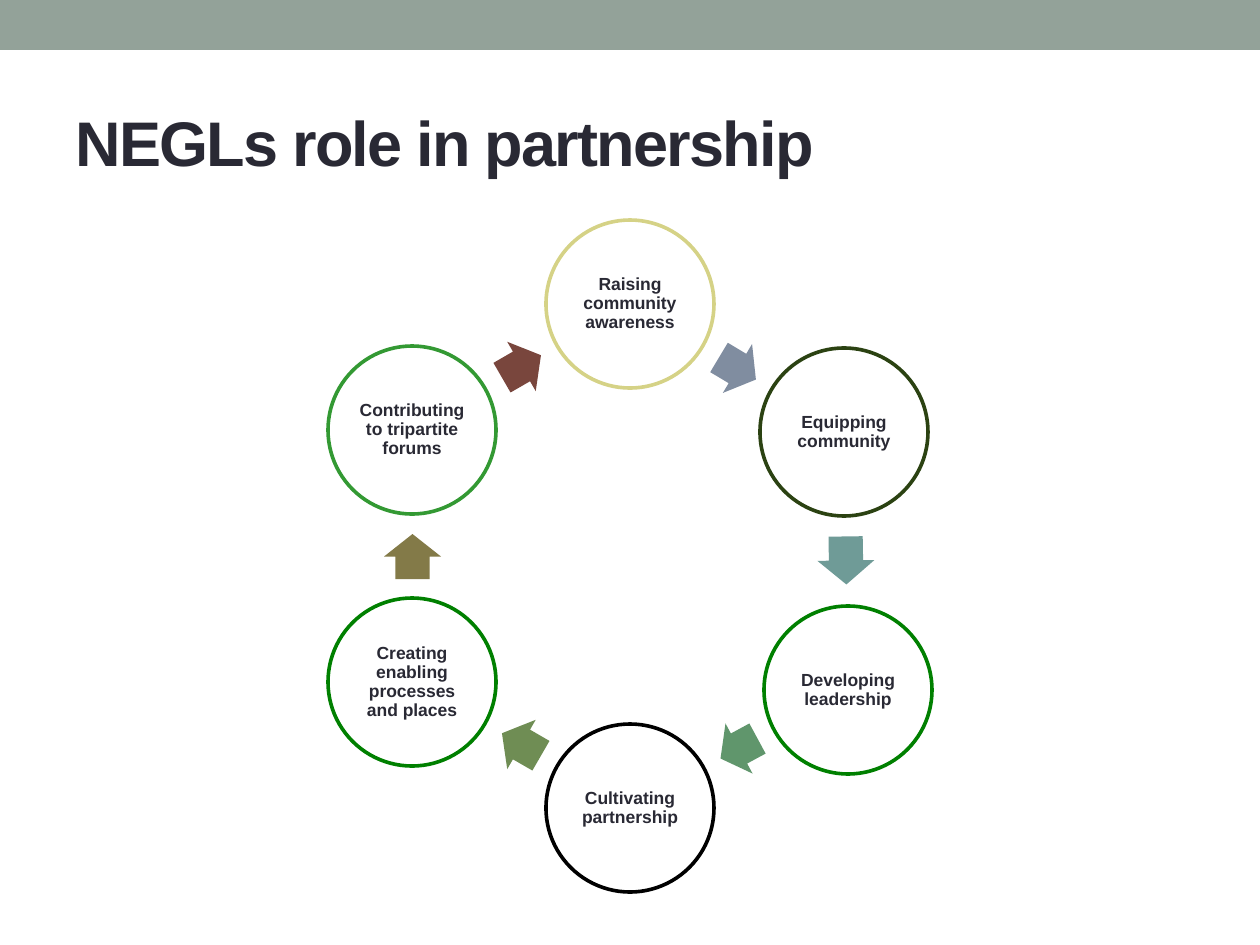
from dataclasses import dataclass
from math import atan2, cos, degrees, hypot, radians, sin

from pptx import Presentation
from pptx.dml.color import RGBColor
from pptx.enum.shapes import MSO_SHAPE
from pptx.enum.text import MSO_ANCHOR, PP_ALIGN
from pptx.util import Emu, Pt

RECTANGLE = MSO_SHAPE.RECTANGLE
OVAL = MSO_SHAPE.OVAL
RIGHT_ARROW = MSO_SHAPE.RIGHT_ARROW
MIDDLE = MSO_ANCHOR.MIDDLE
CENTER = PP_ALIGN.CENTER

EMU_PER_PX = 914400 // 126
SLIDE_WIDTH, SLIDE_HEIGHT = 1260, 945
RING_CENTER_X, RING_CENTER_Y, RING_RADIUS = 630, 556, 252
CIRCLE_SIZE = 168
ARROW_HEIGHT = 57
ARROW_SHARE_OF_GAP = 0.53


@dataclass(frozen=True)
class Theme:
    """Colours, font and type sizes of the slide."""

    font: str = "Arial"
    ink: str = "292934"
    band: str = "93A299"
    paper: str = "FFFFFF"
    title_size: int = 36
    label_size: int = 10
    outline_width: float = 2.08


@dataclass(frozen=True)
class Step:
    """One circle of the cycle, its outgoing arrow and its shift off the ring."""

    label: str
    outline: str
    arrow: str
    shift_x: int = 0
    shift_y: int = 0


THEME = Theme()
STEPS = [
    Step("Raising community awareness", "D5D286", "808DA0"),
    Step("Equipping community", "2B4212", "6F9B97", -4, 2),
    Step("Developing leadership", "008000", "60966C", 0, 8),
    Step("Cultivating partnership", "000000", "6F8D54"),
    Step("Creating enabling processes and places", "008000", "837A48"),
    Step("Contributing to tripartite forums", "339933", "79463D"),
]


def px(length):
    """Turn whole pixels into EMU."""
    return Emu(round(length) * EMU_PER_PX)


def style_paragraph(para, size):
    """Set the shared bold type on a paragraph."""
    para.font.name = THEME.font
    para.font.size = Pt(size)
    para.font.bold = True
    para.font.color.rgb = RGBColor.from_string(THEME.ink)


def add_filled_shape(page, kind, left, top, width, height, fill):
    """Add a flat shape without outline or shadow."""
    shape = page.shapes.add_shape(kind, px(left), px(top), px(width), px(height))
    shape.shadow.inherit = False
    shape.fill.solid()
    shape.fill.fore_color.rgb = RGBColor.from_string(fill)
    shape.line.fill.background()
    return shape


def add_title(page, text):
    """Add the tightly spaced slide title."""
    box = page.shapes.add_textbox(px(63), px(73), px(1134), px(136))
    frame = box.text_frame
    frame.word_wrap = True
    frame.vertical_anchor = MIDDLE
    para = frame.paragraphs[0]
    span = para.add_run()
    span.text = text
    style_paragraph(para, THEME.title_size)
    span.font._element.set("spc", "-100")


def add_circle(page, step, center):
    """Add one outlined circle with its label."""
    left, top = (value - CIRCLE_SIZE / 2 for value in center)
    circle = add_filled_shape(page, OVAL, left, top, CIRCLE_SIZE, CIRCLE_SIZE, THEME.paper)
    circle.line.color.rgb = RGBColor.from_string(step.outline)
    circle.line.width = Pt(THEME.outline_width)
    frame = circle.text_frame
    frame.word_wrap = True
    frame.vertical_anchor = MIDDLE
    frame.margin_left = frame.margin_right = px(1)
    frame.margin_top = frame.margin_bottom = px(1)
    para = frame.paragraphs[0]
    para.text = step.label
    para.alignment = CENTER
    para.line_spacing = 0.9
    style_paragraph(para, THEME.label_size)


def add_arrow(page, start, end, fill):
    """Add a block arrow midway between two circle centres."""
    run, rise = end[0] - start[0], end[1] - start[1]
    width = (hypot(run, rise) - CIRCLE_SIZE) * ARROW_SHARE_OF_GAP
    left = (start[0] + end[0] - width) / 2
    top = (start[1] + end[1] - ARROW_HEIGHT) / 2
    arrow = add_filled_shape(page, RIGHT_ARROW, left, top, width, ARROW_HEIGHT, fill)
    arrow.adjustments[0] = 0.6
    arrow.adjustments[1] = 0.5
    arrow.rotation = round(degrees(atan2(rise, run)), 1) % 360


def ring_center(index, step):
    """Give the centre of a step, clockwise from the top of the ring."""
    angle = radians(360 / len(STEPS) * index - 90)
    return (
        RING_CENTER_X + RING_RADIUS * cos(angle) + step.shift_x,
        RING_CENTER_Y + RING_RADIUS * sin(angle) + step.shift_y,
    )


def add_cycle(page):
    """Add all circles and the arrows that link them."""
    centers = [ring_center(index, step) for index, step in enumerate(STEPS)]
    following = centers[1:] + centers[:1]
    for step, center, next_center in zip(STEPS, centers, following):
        add_circle(page, step, center)
        add_arrow(page, center, next_center, step.arrow)


def main():
    """Build and save the slide."""
    deck = Presentation()
    deck.slide_width, deck.slide_height = px(SLIDE_WIDTH), px(SLIDE_HEIGHT)
    page = deck.slides.add_slide(deck.slide_layouts[6])
    add_filled_shape(page, RECTANGLE, 0, 0, SLIDE_WIDTH, 50, THEME.band)
    add_title(page, "NEGLs role in partnership")
    add_cycle(page)
    deck.save("out.pptx")


if __name__ == "__main__":
    main()
